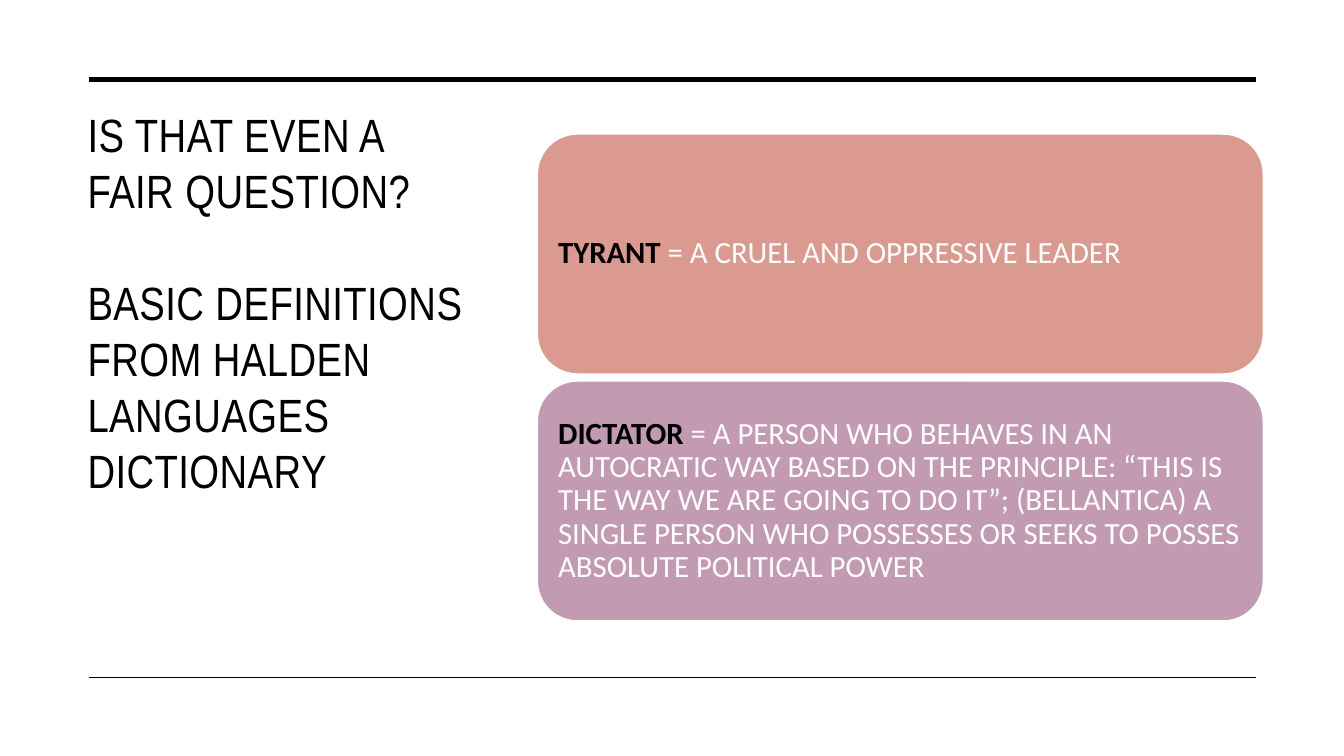
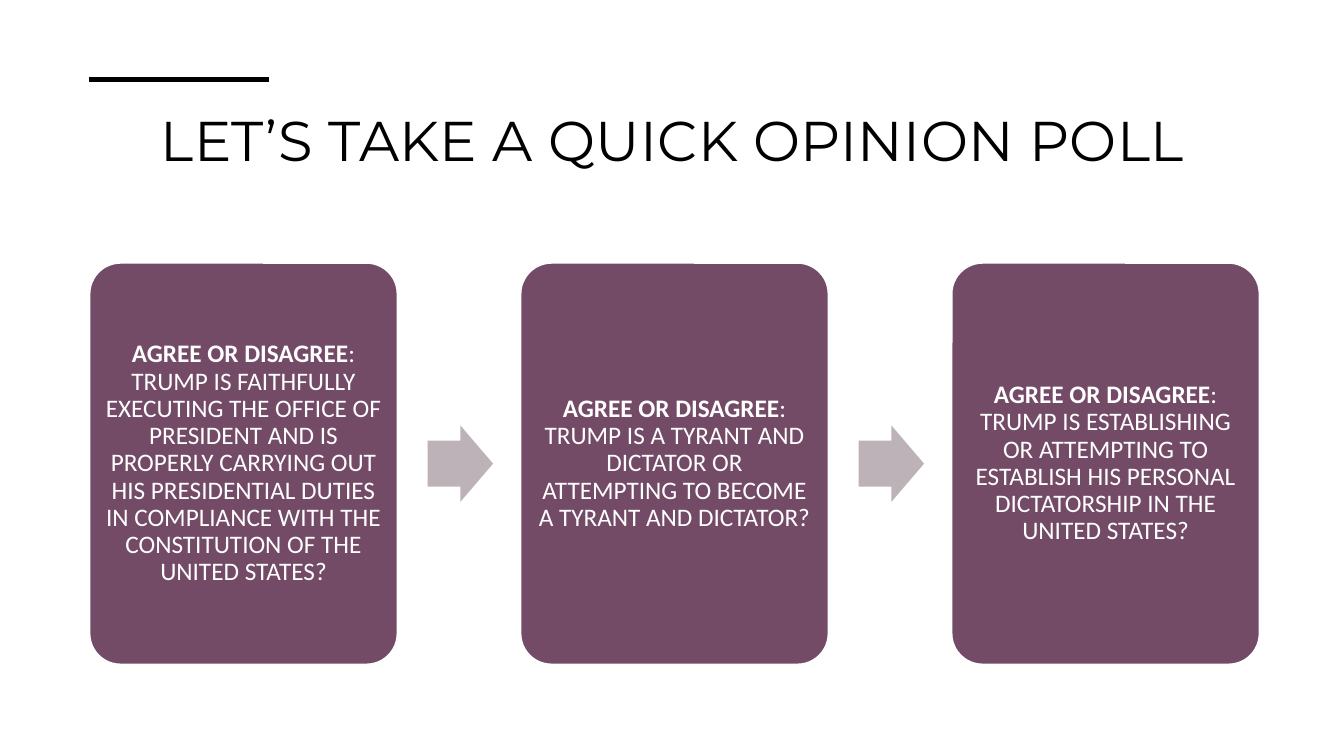
from lxml import etree
from pptx import Presentation
from pptx.dml.color import RGBColor
from pptx.enum.shapes import MSO_CONNECTOR, MSO_SHAPE
from pptx.enum.text import MSO_ANCHOR, PP_ALIGN
from pptx.oxml.ns import qn
from pptx.util import Inches, Pt


def color(value):
    return RGBColor.from_string(value)


class Deck:
    """Holds the shared style and the slide being built."""

    INK = "000000"
    PAPER = "FFFFFF"
    ROSE = "DB9A8F"
    MAUVE = "C29AB1"
    PLUM = "734B67"
    ARROW = "BCB2B8"
    BODY_FONT = "Calibri"
    RULE_LEFT = 0.88
    TITLE_LEFT = 0.77
    TITLE_TOP = 1

    def __init__(self):
        self.presentation = Presentation()
        self.presentation.slide_width = Inches(13.33)
        self.presentation.slide_height = Inches(7.5)
        self.slide = None

    def new_slide(self, rule_right):
        self.slide = self.presentation.slides.add_slide(self.presentation.slide_layouts[6])
        self.rule(0.79, rule_right, 3.5)

    def rule(self, top, right, weight):
        line = self.slide.shapes.add_connector(
            MSO_CONNECTOR.STRAIGHT,
            Inches(self.RULE_LEFT), Inches(top), Inches(right), Inches(top))
        line.line.color.rgb = color(self.INK)
        line.line.width = Pt(weight)
        etree.SubElement(line._element.spPr, qn("a:effectLst"))

    def add_run(self, paragraph, text, ink, **formats):
        run = paragraph.add_run()
        run.text = text
        run.font.color.rgb = color(ink)
        for name, value in formats.items():
            setattr(run.font, name, value)
        return run

    def title(self, lines, width, height, font, size, **formats):
        box = self.slide.shapes.add_textbox(
            Inches(self.TITLE_LEFT), Inches(self.TITLE_TOP), Inches(width), Inches(height))
        frame = box.text_frame
        frame.word_wrap = True
        for index, text in enumerate(lines):
            paragraph = frame.add_paragraph() if index else frame.paragraphs[0]
            for name, value in formats.items():
                setattr(paragraph, name, value)
            if index:
                paragraph.space_before = paragraph.line_spacing
            run = self.add_run(paragraph, text, self.INK, name=font, size=Pt(size))
            run.font._element.set("spc", "30")

    def block(self, kind, left, top, width, height, fill, adjustments=()):
        shape = self.slide.shapes.add_shape(
            kind, Inches(left), Inches(top), Inches(width), Inches(height))
        shape.shadow.inherit = False
        shape.fill.solid()
        shape.fill.fore_color.rgb = color(fill)
        shape.line.fill.background()
        for index, value in enumerate(adjustments):
            shape.adjustments[index] = value
        return shape

    def card(self, place, fill, term, text, term_ink, size, inset, align, adjustments=()):
        shape = self.block(MSO_SHAPE.ROUNDED_RECTANGLE, *place, fill, adjustments)
        shape.line.color.rgb = color(self.PAPER)
        shape.line.width = Pt(1)
        frame = shape.text_frame
        frame.word_wrap = True
        frame.vertical_anchor = MSO_ANCHOR.MIDDLE
        for side in ("left", "top", "right", "bottom"):
            setattr(frame, f"margin_{side}", Inches(inset))
        paragraph = frame.paragraphs[0]
        paragraph.alignment = align
        paragraph.line_spacing = 0.9
        font = {"name": self.BODY_FONT, "size": Pt(size)}
        self.add_run(paragraph, term, term_ink, bold=True, **font)
        self.add_run(paragraph, text, self.PAPER, bold=False, **font)

    def arrow(self, left, top, width, height):
        self.block(MSO_SHAPE.RIGHT_ARROW, left, top, width, height, self.ARROW, (0.6, 0.5))


def definitions_slide(deck):
    right = 12.46
    deck.new_slide(right)
    deck.rule(6.72, right, 1)
    deck.title(
        ["IS THAT EVEN A FAIR QUESTION?",
         "BASIC DEFINITIONS FROM HALDEN LANGUAGES DICTIONARY"],
        4, 4.82, "Arial Narrow", 33.3, line_spacing=Pt(40))
    definitions = [
        (deck.ROSE, "TYRANT", " = A CRUEL AND OPPRESSIVE LEADER"),
        (deck.MAUVE, "DICTATOR",
         " = A PERSON WHO BEHAVES IN AN AUTOCRATIC WAY BASED ON THE PRINCIPLE: "
         "“THIS IS THE WAY WE ARE GOING TO DO IT”; (BELLANTICA) A SINGLE PERSON "
         "WHO POSSESSES OR SEEKS TO POSSES ABSOLUTE POLITICAL POWER"),
    ]
    for index, (fill, term, text) in enumerate(definitions):
        place = (5.33, 1.33 + index * 2.45, 7.2, 2.38)
        deck.card(place, fill, term, text, deck.INK, 22, 0.09, PP_ALIGN.LEFT)


def poll_slide(deck):
    deck.new_slide(2.67)
    deck.title(["LET’S TAKE A QUICK OPINION POLL"], 11.81, 1.15, "Montserrat", 40,
               alignment=PP_ALIGN.CENTER)
    questions = [
        "TRUMP IS FAITHFULLY EXECUTING THE OFFICE OF PRESIDENT AND IS PROPERLY CARRYING "
        "OUT HIS PRESIDENTIAL DUTIES IN COMPLIANCE WITH THE CONSTITUTION OF THE UNITED STATES?",
        "TRUMP IS A TYRANT AND DICTATOR OR ATTEMPTING TO BECOME A TYRANT AND DICTATOR?",
        "TRUMP IS ESTABLISHING OR ATTEMPTING TO ESTABLISH HIS PERSONAL DICTATORSHIP "
        "IN THE UNITED STATES?",
    ]
    first_left, last_right = 0.89, 12.49
    top, width, height = 2.61, 3.05, 3.98
    arrow_width, arrow_height = 0.65, 0.76
    gap = (last_right - first_left - len(questions) * width) / (len(questions) - 1)
    for index, question in enumerate(questions):
        left = first_left + index * (width + gap)
        if index:
            deck.arrow(left - gap + 0.3, top + (height - arrow_height) / 2,
                       arrow_width, arrow_height)
        deck.card((left, top, width, height), deck.PLUM, "AGREE OR DISAGREE",
                  f": {question}", deck.PAPER, 18, 0.07, PP_ALIGN.CENTER, (0.1,))


def main():
    deck = Deck()
    definitions_slide(deck)
    poll_slide(deck)
    deck.presentation.save("out.pptx")


if __name__ == "__main__":
    main()
